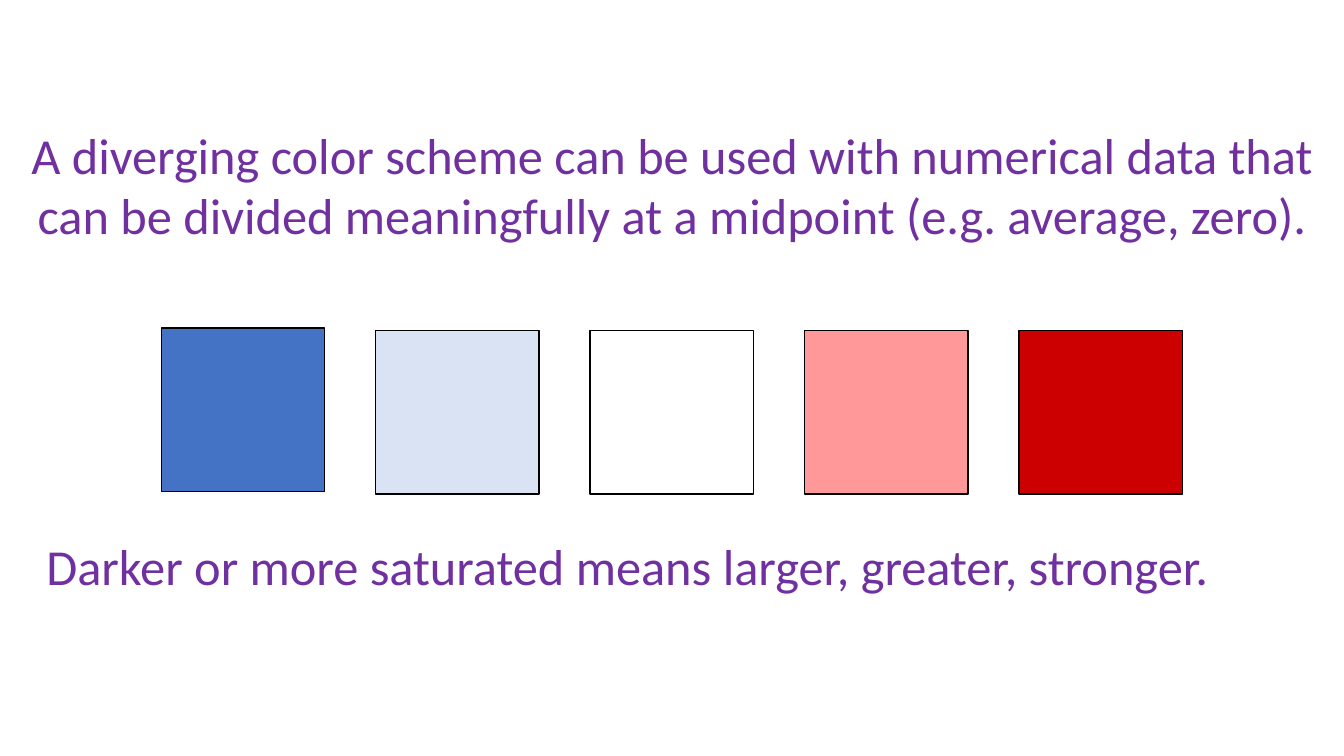
from dataclasses import dataclass

from pptx import Presentation
from pptx import util as u
from pptx.dml import color
from pptx.enum import shapes, text


@dataclass(frozen=True)
class Theme:
    font: str = "Calibri"
    text_size: float = 36
    text_color: str = "7030A0"
    outline: str = "000000"
    outline_width: float = 1
    scale: tuple = ("4472C4", "DAE3F3", "FFFFFF", "FF9999", "CC0000")


THEME = Theme()


def rgb(value):
    return color.RGBColor.from_string(value)


def add_statement(slide, box, wording, alignment, wrap):
    text_box = slide.shapes.add_textbox(*(u.Pt(length) for length in box))
    frame = text_box.text_frame
    frame.word_wrap = wrap
    frame.auto_size = text.MSO_AUTO_SIZE.SHAPE_TO_FIT_TEXT
    paragraph = frame.paragraphs[0]
    paragraph.alignment = alignment
    run = paragraph.add_run()
    run.text = wording
    run.font.name = THEME.font
    run.font.size = u.Pt(THEME.text_size)
    run.font.color.rgb = rgb(THEME.text_color)


def add_color_scale(slide, box, side, first_lift):
    """Spread square swatches evenly over the box, the first one slightly raised."""
    left, top, width, _ = box
    pitch = (width - side) / (len(THEME.scale) - 1)
    for index, fill in enumerate(THEME.scale):
        swatch_top = top - first_lift if index == 0 else top
        swatch = slide.shapes.add_shape(
            shapes.MSO_SHAPE.RECTANGLE,
            u.Pt(left + index * pitch), u.Pt(swatch_top), u.Pt(side), u.Pt(side))
        swatch.shadow.inherit = False
        swatch.fill.solid()
        swatch.fill.fore_color.rgb = rgb(fill)
        swatch.line.color.rgb = rgb(THEME.outline)
        swatch.line.width = u.Pt(THEME.outline_width)


def build_diverging_slide(presentation):
    slide = presentation.slides.add_slide(presentation.slide_layouts[6])
    add_color_scale(slide, (115.2, 236, 729.4, 116.8), side=116.8, first_lift=1.8)
    add_statement(
        slide, (10.8, 85, 939, 138.2),
        "A diverging color scheme can be used with numerical data that "
        "can be divided meaningfully at a midpoint (e.g. average, zero).",
        text.PP_ALIGN.CENTER, wrap=True)
    add_statement(
        slide, (26, 378.7, 900, 51),
        "Darker or more saturated means larger, greater, stronger.",
        text.PP_ALIGN.LEFT, wrap=False)


def main():
    presentation = Presentation()
    presentation.slide_width = u.Pt(960)
    presentation.slide_height = u.Pt(540)
    build_diverging_slide(presentation)
    presentation.save("out.pptx")


if __name__ == "__main__":
    main()
